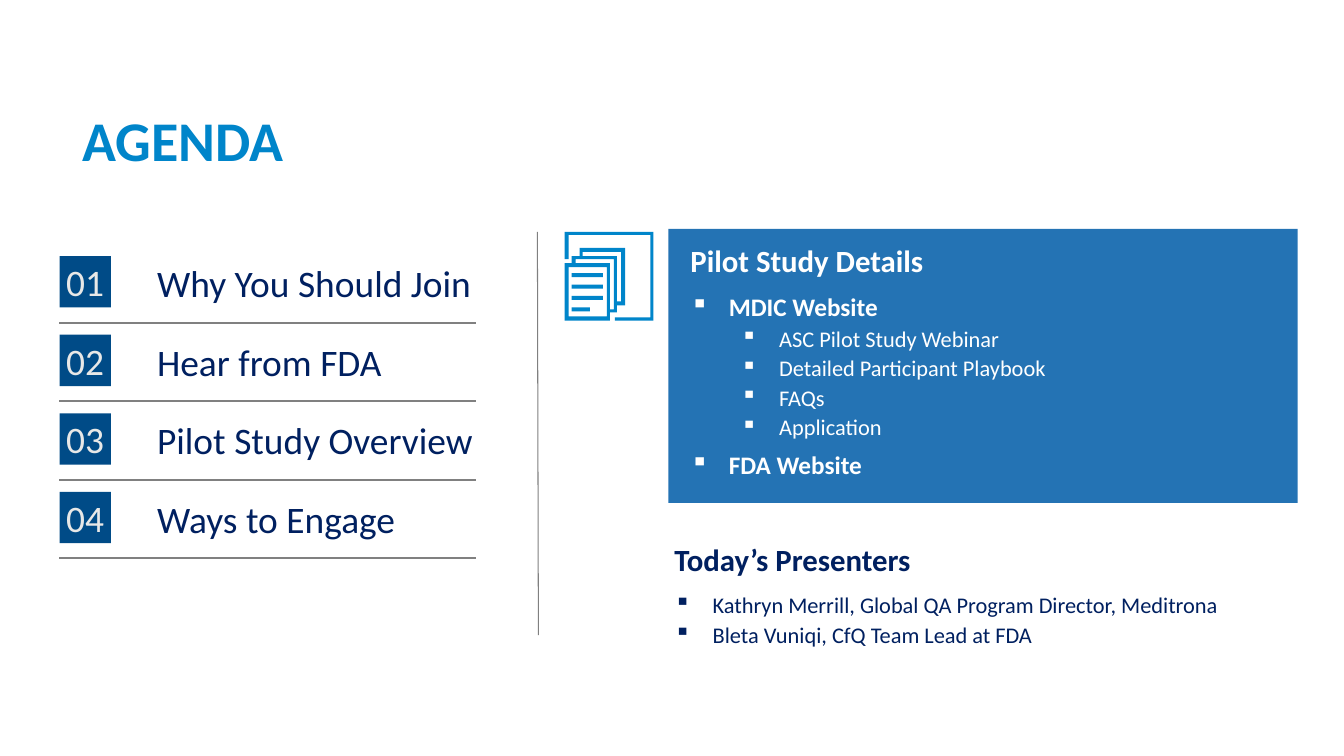
from lxml import etree
from pptx import Presentation
from pptx.dml.color import RGBColor
from pptx.enum.shapes import MSO_CONNECTOR, MSO_SHAPE
from pptx.enum.text import MSO_ANCHOR, PP_ALIGN
from pptx.oxml.ns import qn
from pptx.util import Inches, Pt

RECTANGLE = MSO_SHAPE.RECTANGLE
STRAIGHT = MSO_CONNECTOR.STRAIGHT
CENTER, LEFT = PP_ALIGN.CENTER, PP_ALIGN.LEFT
MIDDLE, TOP = MSO_ANCHOR.MIDDLE, MSO_ANCHOR.TOP

FONT = "Calibri"
BRIGHT_BLUE = RGBColor(0x00, 0x85, 0xCA)
PANEL_BLUE = RGBColor(0x00, 0x5C, 0xA8)
DARK_BLUE = RGBColor(0x00, 0x4B, 0x87)
NAVY = RGBColor(0x00, 0x20, 0x60)
PALE_GRAY = RGBColor(0xE8, 0xE8, 0xE7)
GRAY = RGBColor(0x80, 0x80, 0x80)
WHITE = RGBColor(0xFF, 0xFF, 0xFF)

TITLE = "AGENDA"
AGENDA = ["Why You Should Join", "Hear from FDA", "Pilot Study Overview", "Ways to Engage"]

# Text, style, space before in points
PILOT_DETAILS = [
    ("Pilot Study Details", "heading", 0),
    ("MDIC Website", "topic", 9),
    ("ASC Pilot Study Webinar", "detail", 2.3),
    ("Detailed Participant Playbook", "detail", 1.9),
    ("FAQs", "detail", 1.9),
    ("Application", "detail", 1.9),
    ("FDA Website", "topic", 6.4),
]
PRESENTERS = [
    ("Today’s Presenters", "heading", 0),
    ("Kathryn Merrill, Global QA Program Director, Meditrona", "person", 9.4),
    ("Bleta Vuniqi, CfQ Team Lead at FDA", "person", 1.9),
]
# Size, bold, bullet indent in inches
STYLES = {
    "heading": (22, True, 0),
    "topic": (18, True, 0.38),
    "detail": (16, False, 0.88),
    "person": (16, False, 0.38),
}
HANGING = 0.38

# Agenda rows, in inches
ROW_TOP, ROW_PITCH = 2.54, 0.78
NUMBER_LEFT, NUMBER_SIZE = 0.59, 0.51
LABEL_LEFT, LABEL_OFFSET = 1.46, 0.08
RULE_RIGHT, RULE_OFFSET = 4.72, 0.66

# Document icon, in hundredths of an inch from its corner
ICON_LEFT, ICON_TOP = 5.6, 2.3
ICON_UNIT = 0.01
ICON_FRAME = [[(88, 88), (50, 88), (50, 85), (85, 85), (85, 3),
               (4, 3), (4, 27), (0, 27), (0, 0), (88, 0)]]
ICON_PAGES = [
    [(15, 16), (15, 24), (7, 24), (7, 31), (0, 31), (0, 88),
     (45, 88), (45, 80), (52, 80), (52, 73), (60, 73), (60, 16)],
    [(4, 35), (42, 35), (42, 84), (4, 84)],
    [(11, 27), (49, 27), (49, 77), (45, 77), (45, 31), (11, 31)],
    [(18, 20), (56, 20), (56, 69), (52, 69), (52, 24), (18, 24)],
]
TEXT_BAR_WIDTHS = [31, 31, 31, 18]
TEXT_BAR_LEFT, TEXT_BAR_TOP, TEXT_BAR_PITCH, TEXT_BAR_HEIGHT = 7, 41, 11.3, 4


def paint(shape, color):
    shape.shadow.inherit = False
    shape.fill.solid()
    shape.fill.fore_color.rgb = color
    shape.line.fill.background()


def add_box(shapes, left, top, width, height, color):
    box = shapes.add_shape(RECTANGLE, Inches(left), Inches(top), Inches(width), Inches(height))
    paint(box, color)
    return box


def add_rule(shapes, start, end, width):
    rule = shapes.add_connector(STRAIGHT, *map(Inches, start + end))
    rule.line.color.rgb = GRAY
    rule.line.width = Pt(width)
    etree.SubElement(rule._element.spPr, qn("a:effectLst"))


def add_text_frame(shapes, left, top, width, height):
    frame = shapes.add_textbox(Inches(left), Inches(top), Inches(width), Inches(height)).text_frame
    frame.word_wrap = True
    return frame


def write(paragraph, text, size, color, bold=False, align=LEFT):
    paragraph.text = text
    paragraph.alignment = align
    font = paragraph.font
    font.name, font.size, font.bold = FONT, Pt(size), bold
    font.color.rgb = color


def add_bullet(paragraph, indent):
    properties = paragraph._p.get_or_add_pPr()
    properties.set("marL", str(Inches(indent)))
    properties.set("indent", str(-Inches(HANGING)))
    etree.SubElement(properties, qn("a:buChar")).set("char", "▪")


def write_list(frame, items, color):
    for index, (text, style, space_before) in enumerate(items):
        paragraph = frame.add_paragraph() if index else frame.paragraphs[0]
        size, bold, indent = STYLES[style]
        if indent:
            add_bullet(paragraph, indent)
        if space_before:
            paragraph.space_before = Pt(space_before)
        write(paragraph, text, size, color, bold)


def add_agenda_row(shapes, index, label):
    top = ROW_TOP + index * ROW_PITCH
    box = add_box(shapes, NUMBER_LEFT, top, NUMBER_SIZE, NUMBER_SIZE, DARK_BLUE)
    frame = box.text_frame
    frame.margin_left = frame.margin_right = frame.margin_top = frame.margin_bottom = 0
    frame.vertical_anchor = MIDDLE
    write(frame.paragraphs[0], f"{index + 1:02}", 26.7, PALE_GRAY, align=CENTER)

    paragraph = add_text_frame(shapes, LABEL_LEFT, top + LABEL_OFFSET, 3.7, 0.46).paragraphs[0]
    paragraph.line_spacing = 0.8
    write(paragraph, label, 26.7, NAVY)

    rule_y = top + RULE_OFFSET
    add_rule(shapes, (NUMBER_LEFT, rule_y), (RULE_RIGHT, rule_y), 1.5)


def add_outline(shapes, contours):
    """Draw closed contours as one shape; inner contours become holes."""
    first, *others = contours
    builder = shapes.build_freeform(*first[0], scale=Inches(ICON_UNIT))
    builder.add_line_segments(first[1:], close=True)
    for contour in others:
        builder.move_to(*contour[0])
        builder.add_line_segments(contour[1:], close=True)
    paint(builder.convert_to_shape(Inches(ICON_LEFT), Inches(ICON_TOP)), BRIGHT_BLUE)


def add_document_icon(shapes):
    icon = shapes.add_group_shape().shapes
    add_outline(icon, ICON_FRAME)
    add_outline(icon, ICON_PAGES)
    left = ICON_LEFT + TEXT_BAR_LEFT * ICON_UNIT
    for index, width in enumerate(TEXT_BAR_WIDTHS):
        top = ICON_TOP + (TEXT_BAR_TOP + index * TEXT_BAR_PITCH) * ICON_UNIT
        add_box(icon, left, top, width * ICON_UNIT, TEXT_BAR_HEIGHT * ICON_UNIT, BRIGHT_BLUE)


def main():
    presentation = Presentation()
    presentation.slide_width, presentation.slide_height = Inches(13.33), Inches(7.5)
    shapes = presentation.slides.add_slide(presentation.slide_layouts[6]).shapes

    panel = add_box(shapes, 6.63, 2.27, 6.24, 2.72, PANEL_BLUE)
    panel_color = panel._element.spPr.find(".//" + qn("a:srgbClr"))
    etree.SubElement(panel_color, qn("a:alpha")).set("val", "86000")

    title = add_text_frame(shapes, 0.72, 1.05, 7.2, 0.67)
    title.margin_top = title.margin_bottom = 0
    title.vertical_anchor = TOP
    write(title.paragraphs[0], TITLE, 40, BRIGHT_BLUE, bold=True)

    for index, label in enumerate(AGENDA):
        add_agenda_row(shapes, index, label)
    add_rule(shapes, (5.33, 2.3), (5.34, 6.3), 0.75)

    add_document_icon(shapes)
    write_list(add_text_frame(shapes, 6.75, 2.35, 6.23, 2.57), PILOT_DETAILS, WHITE)
    write_list(add_text_frame(shapes, 6.59, 5.32, 6.36, 1.33), PRESENTERS, NAVY)
    presentation.save("out.pptx")


if __name__ == "__main__":
    main()
